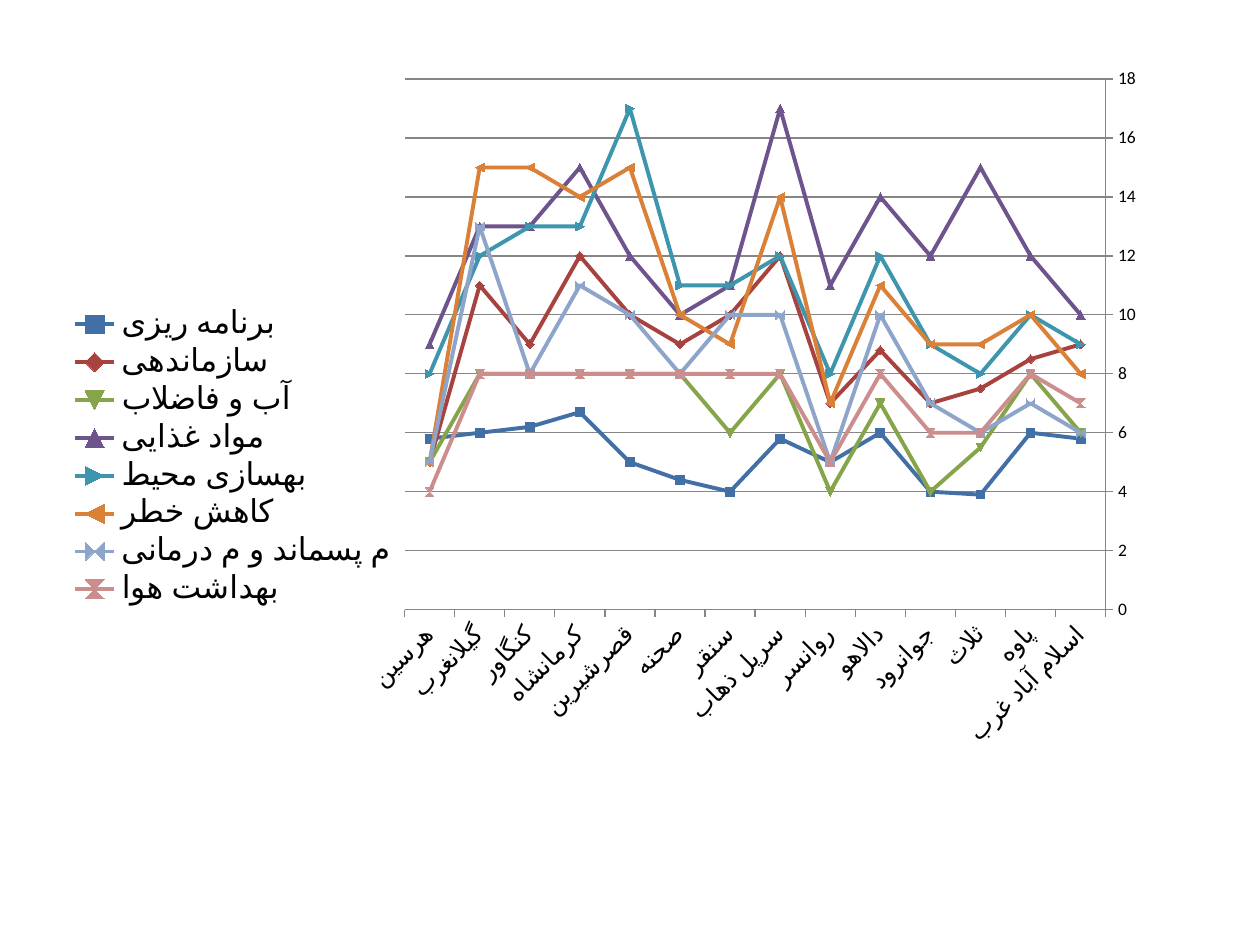
"""Build a slide with a line chart of scores by city and field."""
from dataclasses import dataclass

import pptx
import pptx.chart.data
import pptx.dml.color
import pptx.enum.chart
import pptx.oxml
import pptx.oxml.ns
import pptx.util

RGB = pptx.dml.color.RGBColor
PX = 914400 // 126
FONT = "Calibri"

BLACK = RGB(0x00, 0x00, 0x00)
GRAY = RGB(0x86, 0x86, 0x86)
BLUE = RGB(0x41, 0x6F, 0xA6)
RED = RGB(0xA8, 0x42, 0x3F)
GREEN = RGB(0x86, 0xA4, 0x4A)
PURPLE = RGB(0x6E, 0x54, 0x8D)
TEAL = RGB(0x3D, 0x96, 0xAE)
ORANGE = RGB(0xDA, 0x81, 0x37)
SKY = RGB(0x8E, 0xA5, 0xCB)
ROSE = RGB(0xCC, 0x8E, 0x8D)


@dataclass
class Field:
    """One line of the chart."""

    name: str
    color: RGB
    scores: tuple[float, ...]


CITIES = (
    "اسلام آباد غرب", "پاوه", "ثلاث", "جوانرود", "دالاهو", "روانسر", "سرپل ذهاب",
    "سنقر", "صحنه", "قصرشیرین", "کرمانشاه", "کنگاور", "گیلانغرب", "هرسین",
)
FIELDS = (
    Field("برنامه ریزی", BLUE, (5.8, 6, 3.9, 4, 6, 5, 5.8, 4, 4.4, 5, 6.7, 6.2, 6, 5.8)),
    Field("سازماندهی", RED, (9, 8.5, 7.5, 7, 8.8, 7, 12, 10, 9, 10, 12, 9, 11, 5)),
    Field("آب و فاضلاب", GREEN, (6, 8, 5.5, 4, 7, 4, 8, 6, 8, 8, 8, 8, 8, 5)),
    Field("مواد غذایی", PURPLE, (10, 12, 15, 12, 14, 11, 17, 11, 10, 12, 15, 13, 13, 9)),
    Field("بهسازی محیط", TEAL, (9, 10, 8, 9, 12, 8, 12, 11, 11, 17, 13, 13, 12, 8)),
    Field("کاهش خطر", ORANGE, (8, 10, 9, 9, 11, 7, 14, 9, 10, 15, 14, 15, 15, 5)),
    Field("م پسماند و م درمانی", SKY, (6, 7, 6, 7, 10, 5, 10, 10, 8, 10, 11, 8, 13, 5)),
    Field("بهداشت هوا", ROSE, (7, 8, 6, 6, 8, 5, 8, 8, 8, 8, 8, 8, 8, 4)),
)


def set_font(font, size: int) -> None:
    """Set the shared face and colour at a given size."""
    font.name = FONT
    font.size = pptx.util.Pt(size)
    font.color.rgb = BLACK


def set_line(line, color: RGB, width: float) -> None:
    """Set the colour and width of a line."""
    line.color.rgb = color
    line.width = pptx.util.Pt(width)


def place_plot(chart, left: float, top: float, width: float, height: float) -> None:
    """Fix the inner plot area as fractions of the chart."""
    qn = pptx.oxml.ns.qn
    area = chart.element.find(".//" + qn("c:plotArea"))
    for old in area.findall(qn("c:layout")):
        area.remove(old)
    parts = "".join(
        f'<c:{tag} val="{val}"/>'
        for tag, val in (
            ("layoutTarget", "inner"), ("xMode", "edge"), ("yMode", "edge"),
            ("x", left), ("y", top), ("w", width), ("h", height),
        )
    )
    space = pptx.oxml.ns.nsdecls("c")
    area.insert(0, pptx.oxml.parse_xml(
        f"<c:layout {space}><c:manualLayout>{parts}</c:manualLayout></c:layout>"
    ))


def style_axes(chart) -> None:
    """Style both axes, with cities running right to left."""
    cat, val = chart.category_axis, chart.value_axis
    for axis, size in ((cat, 14), (val, 10)):
        axis.major_tick_mark = pptx.enum.chart.XL_TICK_MARK.OUTSIDE
        axis.minor_tick_mark = pptx.enum.chart.XL_TICK_MARK.NONE
        set_font(axis.tick_labels.font, size)
        set_line(axis.format.line, GRAY, 0.75)
    cat.reverse_order = True
    cat.has_major_gridlines = False
    body = cat._element.find(".//" + pptx.oxml.ns.qn("a:bodyPr"))
    body.set("rot", "-2700000")
    val.minimum_scale, val.maximum_scale, val.major_unit = 0, 18, 2
    val.has_major_gridlines = True
    set_line(val.major_gridlines.format.line, GRAY, 0.75)


def add_lines(slide, left: int, top: int, width: int, height: int) -> None:
    """Add the line chart to the slide."""
    data = pptx.chart.data.CategoryChartData()
    data.categories = CITIES
    for field in FIELDS:
        data.add_series(field.name, field.scores)
    chart = slide.shapes.add_chart(
        pptx.enum.chart.XL_CHART_TYPE.LINE_MARKERS,
        left * PX, top * PX, width * PX, height * PX, data,
    ).chart
    set_font(chart.font, 10)
    chart.has_title = False
    chart.has_legend = True
    chart.legend.position = pptx.enum.chart.XL_LEGEND_POSITION.LEFT
    chart.legend.include_in_layout = False
    set_font(chart.legend.font, 18)
    plot = chart.plots[0]
    plot.vary_by_categories = False
    for line, field in zip(plot.series, FIELDS):
        line.smooth = False
        set_line(line.format.line, field.color, 2.25)
    style_axes(chart)
    place_plot(chart, 0.31, 0.03, 0.62, 0.66)


def main() -> None:
    """Build and save the deck."""
    deck = pptx.Presentation()
    deck.slide_width, deck.slide_height = 1260 * PX, 945 * PX
    slide = deck.slides.add_slide(deck.slide_layouts[6])
    add_lines(slide, 54, 55, 1131, 804)
    deck.save("out.pptx")


if __name__ == "__main__":
    main()
